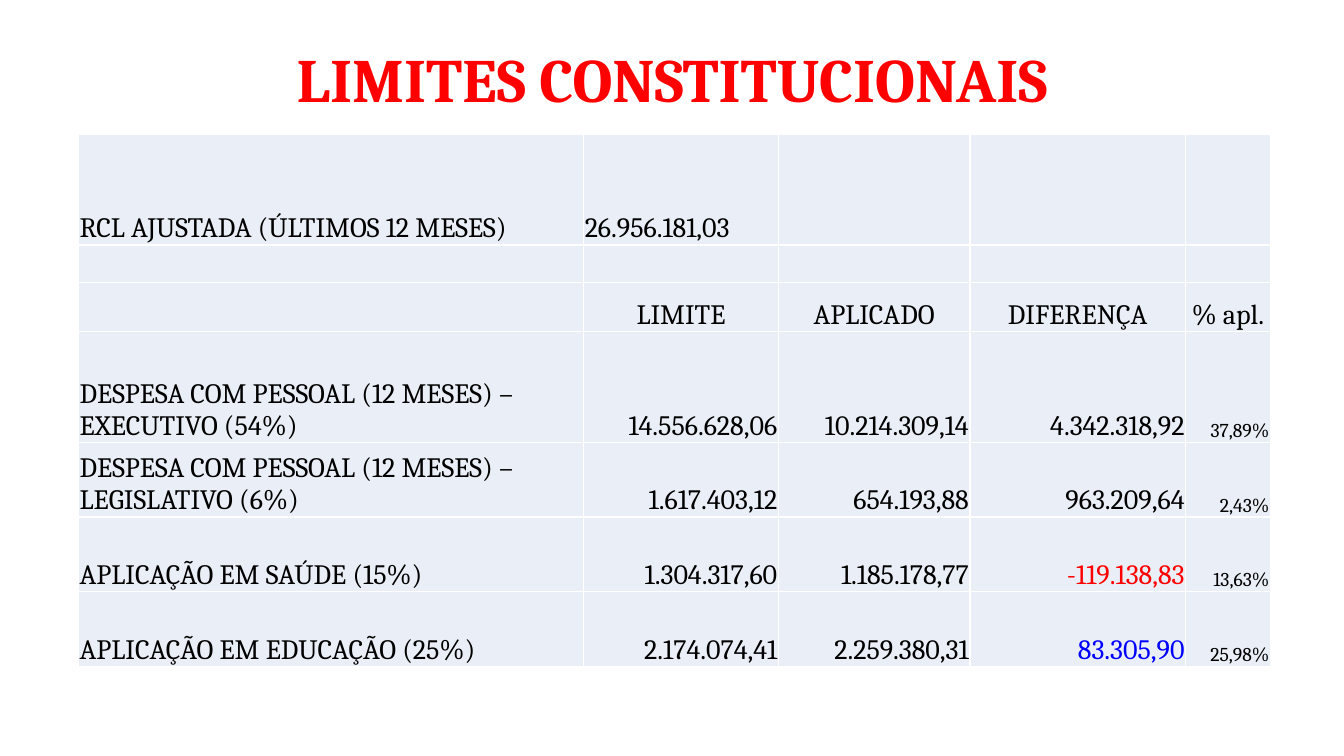
"""Build the constitutional limits slide with its table of limits and amounts applied."""
from lxml.etree import SubElement
from pptx import Presentation
from pptx.dml.color import RGBColor
from pptx.enum.text import MSO_ANCHOR as Anchor, PP_ALIGN as Align
from pptx.oxml import parse_xml
from pptx.oxml.ns import nsdecls, qn
from pptx.util import Inches, Pt

COLORS = {"red": "FF0000", "blue": "0000FF", "black": "000000", "cell": "EAEFF7", "border": "FFFFFF"}
FONT = "Cambria"
COLUMN_WIDTHS = [5.01, 1.93, 1.9, 2.14, 0.84]
ROW_HEIGHTS = [1.1, 0.37, 0.49, 1.1, 0.74, 0.74, 0.74]
HEADER_ROW = 2
PERCENT_COLUMN = 4
ROWS = [
    ["RCL AJUSTADA (ÚLTIMOS 12 MESES)", "26.956.181,03", "", "", ""],
    ["", "", "", "", ""],
    ["", " LIMITE ", "APLICADO", "DIFERENÇA", "% apl."],
    ["DESPESA COM PESSOAL (12 MESES) – EXECUTIVO (54%)", "14.556.628,06", "10.214.309,14", "4.342.318,92", "37,89%"],
    ["DESPESA COM PESSOAL (12 MESES) – LEGISLATIVO (6%)", "1.617.403,12", "654.193,88", "963.209,64", "2,43%"],
    ["APLICAÇÃO EM SAÚDE (15%)", "1.304.317,60", "1.185.178,77", "-119.138,83", "13,63%"],
    ["APLICAÇÃO EM EDUCAÇÃO (25%)", "2.174.074,41", "2.259.380,31", "83.305,90", "25,98%"],
]
HIGHLIGHTS = {(5, 3): "red", (6, 3): "blue"}


def write_text(text_frame, text, size, color, alignment, bold=False):
    text_frame.text = text
    paragraph = text_frame.paragraphs[0]
    paragraph.alignment = alignment
    for run in paragraph.runs:
        run.font.name = FONT
        run.font.size = Pt(size)
        run.font.bold = bold
        run.font.color.rgb = RGBColor.from_string(COLORS[color])
    return paragraph


def add_borders(cell):
    properties = cell._tc.get_or_add_tcPr()
    for position, side in enumerate(["lnL", "lnR", "lnT", "lnB"]):
        line = parse_xml(f'<a:{side} {nsdecls("a")} w="{Pt(1)}"/>')
        fill = SubElement(line, qn("a:solidFill"))
        SubElement(fill, qn("a:srgbClr"), val=COLORS["border"])
        properties.insert(position, line)


presentation = Presentation()
presentation.slide_width = Inches(13.33)
presentation.slide_height = Inches(7.5)
slide = presentation.slides.add_slide(presentation.slide_layouts[6])

title = slide.shapes.add_textbox(Inches(0.92), Inches(0.4), Inches(11.5), Inches(0.83))
title.text_frame.word_wrap = True
title.text_frame.vertical_anchor = Anchor.MIDDLE
title_paragraph = write_text(title.text_frame, "LIMITES CONSTITUCIONAIS", 44, "red", Align.CENTER, bold=True)
title_paragraph.line_spacing = 0.9

table = slide.shapes.add_table(
    len(ROWS), len(COLUMN_WIDTHS), Inches(0.78), Inches(1.33), Inches(11.82), Inches(5.28)
).table
table.first_row = False
table.horz_banding = False
for column, width in zip(table.columns, COLUMN_WIDTHS):
    column.width = Inches(width)
for row, height in zip(table.rows, ROW_HEIGHTS):
    row.height = Inches(height)

for row_index, values in enumerate(ROWS):
    for column_index, value in enumerate(values):
        cell = table.cell(row_index, column_index)
        cell.fill.solid()
        cell.fill.fore_color.rgb = RGBColor.from_string(COLORS["cell"])
        cell.vertical_anchor = Anchor.BOTTOM
        cell.margin_left = cell.margin_right = cell.margin_top = Inches(0.01)
        cell.margin_bottom = 0
        add_borders(cell)

        if column_index == 0 or row_index < HEADER_ROW:
            alignment = Align.LEFT
        elif row_index == HEADER_ROW:
            alignment = Align.CENTER
        else:
            alignment = Align.RIGHT
        size = 14 if column_index == PERCENT_COLUMN and row_index > HEADER_ROW else 20
        color = HIGHLIGHTS.get((row_index, column_index), "black")
        write_text(cell.text_frame, value, size, color, alignment)

presentation.save("out.pptx")
